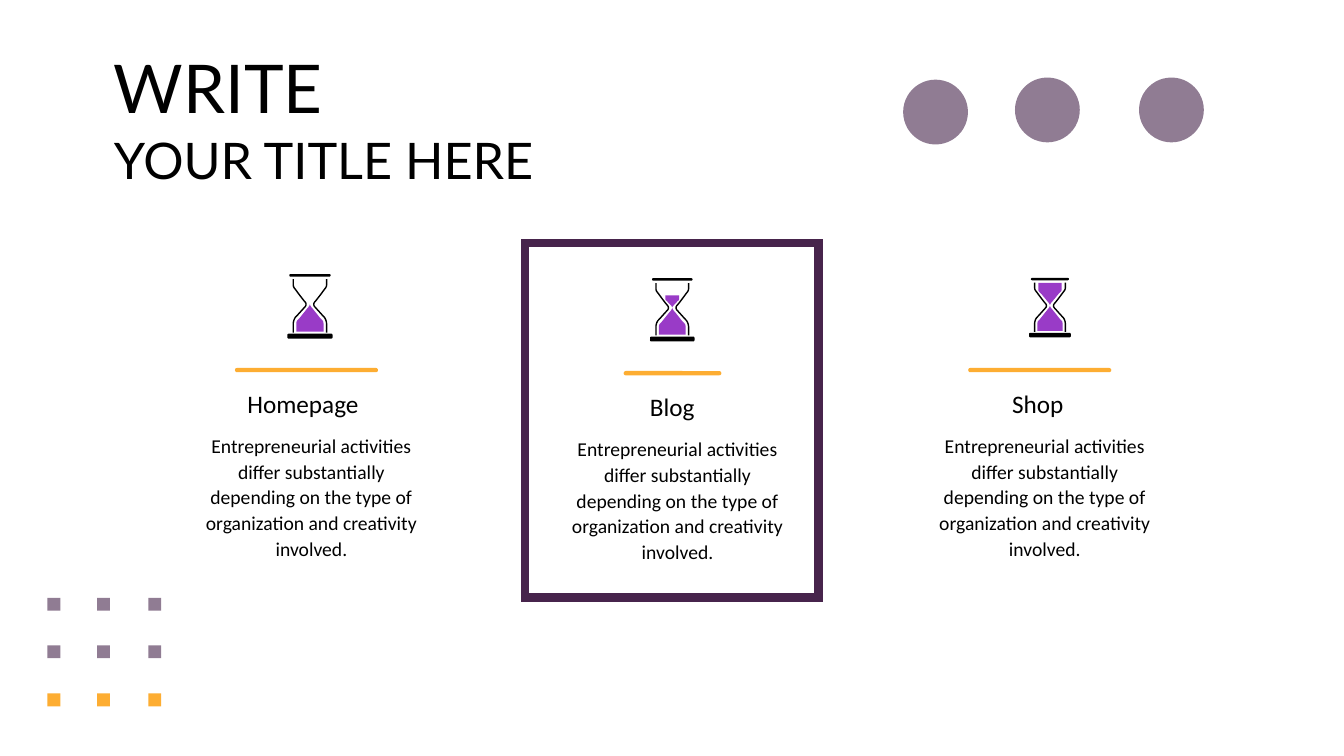
"""Build a title slide with three hourglass columns."""
from lxml.etree import SubElement
from pptx import Presentation
from pptx.dml.color import RGBColor
from pptx.enum.shapes import MSO_SHAPE
from pptx.enum.text import MSO_ANCHOR, MSO_AUTO_SIZE, PP_ALIGN
from pptx.oxml.ns import qn
from pptx.util import Pt

COLORS = {"ink": "000000", "sand": "993BC7", "accent": "FDAD32", "frame": "47244C", "mauve": "907C93"}
BODY = ("Entrepreneurial activities differ substantially depending on the type of "
        "organization and creativity involved.")
TITLES = [("WRITE", 29.5, 380, 65.5, 48), ("YOUR TITLE HERE", 88.6, 614, 51, 36)]
COLUMNS = [
    {"name": "Homepage", "center": 218.9, "shift": 0, "rule": 102.2, "heading": (216.4, 94.3),
     "glass": (221.4, 195.8, 46.1), "upper_sand": None},
    {"name": "Blog", "center": 480.4, "shift": 2.2, "rule": 69.8, "heading": (480.2, 46.1),
     "glass": (480.2, 198.7, 45.2), "upper_sand": (0.56, 0.5)},
    {"name": "Shop", "center": 742.7, "shift": 0, "rule": 102.2, "heading": (741.2, 51.1),
     "glass": (750, 198.5, 42.5), "upper_sand": (1, 1)},
]
FRAME = (375.1, 173.5, 209.5, 253.4)
CIRCLES = [(645.1, 56.9), (725, 55.4), (813.6, 55.4)]
CIRCLE_SIZE = 46.3
SQUARE_LEFTS = (33.9, 69.3, 105.9)
SQUARE_ROWS = [(427, "mauve"), (460.9, "mauve"), (495.3, "accent")]
SQUARE_SIZE = 9.2

GLASS_HEIGHT = 64
SAND_TIP = 29.5
GLASS_BARS = [(0, 41, 2.5, 0.5), (59, 45, 5, 0.3)]
WALL = [
    [(16.5, 58), (16.5, 49)],
    [(16.5, 49), (16.5, 49), (16.5, 46), (14.5, 43)],
    [(14.5, 43), (12.5, 41), (4.5, 32), (4.5, 32)],
    [(4.5, 32), (4.5, 32), (3, 30), (4.5, 28)],
    [(4.5, 28), (6.5, 26), (14.5, 15), (14.5, 15)],
    [(14.5, 15), (14.5, 15), (16.5, 13), (16.5, 11)],
    [(16.5, 11), (16.5, 5)],
]
LOWER_SAND = [
    [(13.5, 57), (13.5, 49)],
    [(13.5, 49), (13.5, 49), (13.5, 47), (12.5, 46)],
    [(12.5, 46), (10.5, 44), (2.5, 34)],
    [(2.5, 34), (0.5, 32), (0, 30), (0, 30)],
]
UPPER_SAND = [
    [(12.5, 5.5), (12.5, 13)],
    [(12.5, 13), (12.5, 13), (12.5, 14), (11.5, 15)],
    [(11.5, 15), (9.5, 17), (2.5, 25.5)],
    [(2.5, 25.5), (0.5, 27.5), (0, SAND_TIP), (0, SAND_TIP)],
]


def color(name):
    """Return a named colour."""
    return RGBColor.from_string(COLORS[name])


def add_text(page, text, left, top, width, height, *, font="Calibri", size=14, align=PP_ALIGN.LEFT,
             wrap=True, grow=True, anchor=MSO_ANCHOR.TOP, insets=None, spacing=None, before=None):
    """Add one paragraph of text in a box."""
    box = page.shapes.add_textbox(Pt(left), Pt(top), Pt(width), Pt(height))
    frame = box.text_frame
    frame.word_wrap = wrap
    frame.auto_size = MSO_AUTO_SIZE.SHAPE_TO_FIT_TEXT if grow else MSO_AUTO_SIZE.NONE
    frame.vertical_anchor = anchor
    if insets:
        frame.margin_left, frame.margin_top, frame.margin_right, frame.margin_bottom = map(Pt, insets)
    para = frame.paragraphs[0]
    para.alignment = align
    if spacing:
        para.line_spacing = spacing
    if before:
        para.space_before = Pt(before)
    span = para.add_run()
    span.text = text
    span.font.name = font
    span.font.size = Pt(size)
    span.font.color.rgb = color("ink")


def paint(shape, fill=None, line=None, weight=1):
    """Set the fill and line of a shape."""
    shape.shadow.inherit = False
    if fill:
        shape.fill.solid()
        shape.fill.fore_color.rgb = color(fill)
    else:
        shape.fill.background()
    if line:
        shape.line.color.rgb = color(line)
        shape.line.width = Pt(weight)
    else:
        shape.line.fill.background()


def add_preset(shapes, kind, left, top, width, height, rounding=None, **style):
    """Add a painted preset shape."""
    shape = shapes.add_shape(kind, Pt(left), Pt(top), Pt(width), Pt(height))
    if rounding is not None:
        shape.adjustments[0] = rounding
    paint(shape, **style)
    return shape


def trace(segments, steps=8):
    """Turn lines and cubic curves into a list of points."""
    points = []
    for segment in segments:
        if len(segment) < 4:
            points += segment
            continue
        for step in range(steps + 1):
            t = step / steps
            weights = ((1 - t) ** 3, 3 * t * (1 - t) ** 2, 3 * t * t * (1 - t), t ** 3)
            points.append(tuple(sum(w * p[axis] for w, p in zip(weights, segment)) for axis in (0, 1)))
    return points


def mirror(points):
    """Reflect points across the axis of the glass."""
    return [(-x, y) for x, y in points]


def add_outline(shapes, points, closed, **style):
    """Add a painted freeform through points on the slide."""
    spots = [(Pt(x), Pt(y)) for x, y in points]
    builder = shapes.build_freeform(*spots[0], scale=1.0)
    builder.add_line_segments(spots[1:], close=closed)
    paint(builder.convert_to_shape(), **style)


def add_hourglass(page, center, top, height, upper_sand):
    """Add an hourglass with its sand level."""
    shapes = page.shapes.add_group_shape().shapes
    scale = height / GLASS_HEIGHT

    def place(points):
        return [(center + x * scale, top + y * scale) for x, y in points]

    wall = trace(WALL)
    for side in (wall, mirror(wall)):
        add_outline(shapes, place(side), False, line="ink")
    for offset, width, thickness, rounding in GLASS_BARS:
        add_preset(shapes, MSO_SHAPE.ROUNDED_RECTANGLE, center - width * scale / 2, top + offset * scale,
                   width * scale, thickness * scale, rounding, fill="ink")
    heaps = [trace(LOWER_SAND)]
    if upper_sand:
        across, down = upper_sand
        heaps.append([(x * across, SAND_TIP + (y - SAND_TIP) * down) for x, y in trace(UPPER_SAND)])
    for heap in heaps:
        add_outline(shapes, place(heap + mirror(heap)[::-1]), True, fill="sand")


def add_column(page, column):
    """Add the icon, rule, heading and body of a column."""
    center, shift, rule = column["center"], column["shift"], column["rule"]
    add_preset(page.shapes, MSO_SHAPE.ROUNDED_RECTANGLE, center - rule / 2, 262.8 + shift, rule, 3.1,
               0.5, fill="accent")
    middle, width = column["heading"]
    add_text(page, column["name"], middle - width / 2, 273.6 + shift, width, 29, size=18,
             align=PP_ALIGN.CENTER, wrap=False)
    add_text(page, BODY, center - 82.1, 302.4 + shift, 164.2, 103.7, align=PP_ALIGN.CENTER, grow=False,
             anchor=MSO_ANCHOR.MIDDLE, insets=(7.2, 0, 0, 0), spacing=1.1, before=15)
    add_hourglass(page, *column["glass"], column["upper_sand"])


def main():
    """Build and save the deck."""
    deck = Presentation()
    deck.slide_width, deck.slide_height = Pt(960), Pt(540)
    page = deck.slides.add_slide(deck.slide_layouts[6])
    for column in COLUMNS:
        add_column(page, column)
    frame = add_preset(page.shapes, MSO_SHAPE.RECTANGLE, *FRAME, line="frame", weight=6)
    SubElement(frame.line._get_or_add_ln(), qn("a:miter"), lim="800000")
    for text, top, width, height, size in TITLES:
        add_text(page, text, 74.2, top, width, height, font="Lato", size=size)
    for left, top in CIRCLES:
        add_preset(page.shapes, MSO_SHAPE.OVAL, left, top, CIRCLE_SIZE, CIRCLE_SIZE, fill="mauve")
    squares = page.shapes.add_group_shape().shapes
    for top, fill in SQUARE_ROWS:
        for left in SQUARE_LEFTS:
            add_preset(squares, MSO_SHAPE.RECTANGLE, left, top, SQUARE_SIZE, SQUARE_SIZE, fill=fill)
    deck.save("out.pptx")


if __name__ == "__main__":
    main()
